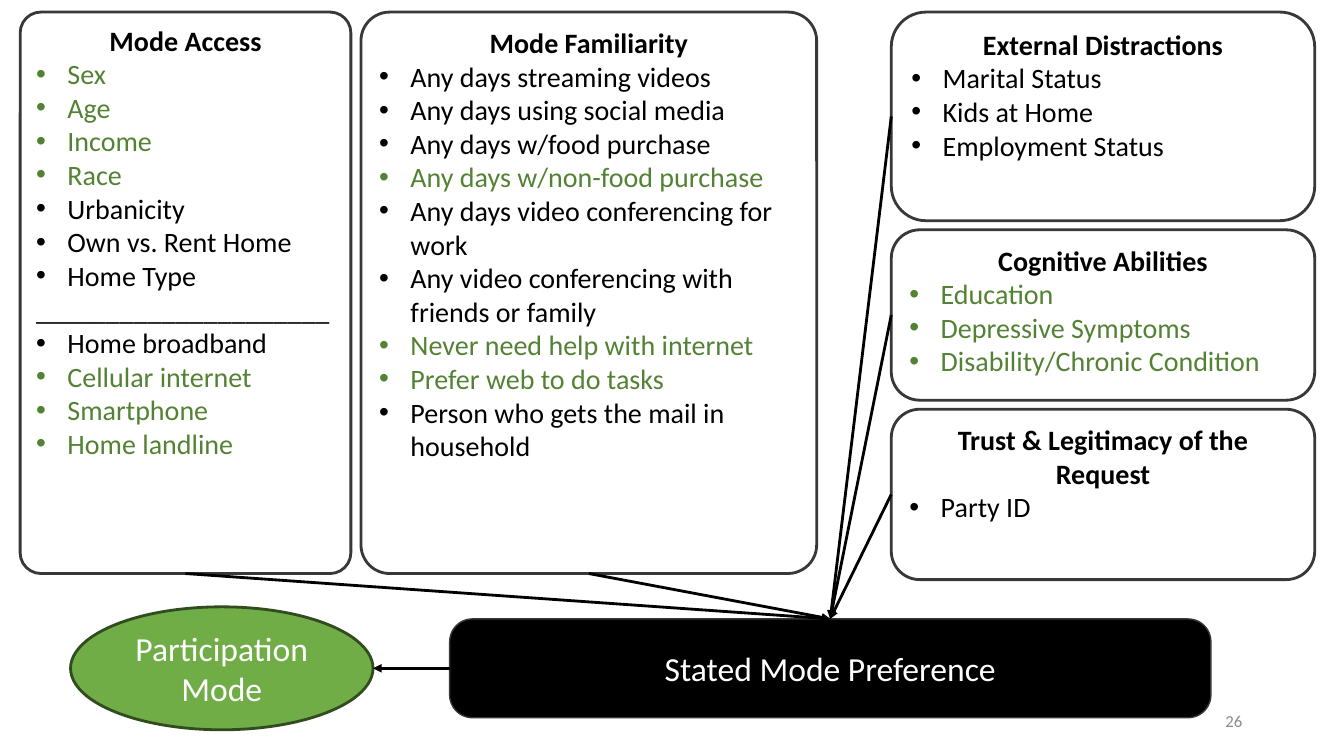
from dataclasses import dataclass

from lxml import etree
from pptx import Presentation
from pptx import util as u
from pptx.dml.color import RGBColor
from pptx.enum import shapes, text
from pptx.oxml.ns import qn

RULE = "_____________________"

# Items marked with "+" are highlighted in green.
ACCESS = ("Mode Access", [
    "+Sex", "+Age", "+Income", "+Race", "Urbanicity", "Own vs. Rent Home",
    "Home Type", RULE, "Home broadband", "+Cellular internet",
    "+Smartphone", "+Home landline"])
FAMILIARITY = ("Mode Familiarity", [
    "Any days streaming videos", "Any days using social media",
    "Any days w/food purchase", "+Any days w/non-food purchase",
    "Any days video conferencing for work",
    "Any video conferencing with friends or family",
    "+Never need help with internet", "+Prefer web to do tasks",
    "Person who gets the mail in household"])
SIDE_FACTORS = [
    (("External Distractions",
      ["Marital Status", "Kids at Home", "Employment Status"]), 2.07),
    (("Cognitive Abilities",
      ["+Education", "+Depressive Symptoms", "+Disability/Chronic Condition"]), 1.69),
    (("Trust & Legitimacy of the Request", ["Party ID"]), 1.69)]
PREFERENCE = "Stated Mode Preference"
PARTICIPATION = "Participation Mode"
PAGE_NUMBER = "26"


@dataclass(frozen=True)
class Theme:
    font: str = "Calibri"
    ink: str = "000000"
    paper: str = "FFFFFF"
    outline: str = "383838"
    highlight: str = "548235"
    oval: str = "70AD47"
    oval_edge: str = "314C1F"
    muted: str = "8C8C8C"
    body_size: int = 20
    outcome_size: int = 24
    page_size: int = 12
    line: int = 2


THEME = Theme()
TOP, GAP = 0.12, 0.09
TALL = 5.57
SIDE_LEFT, SIDE_WIDTH = 8.84, 4.2
INDENT = u.Inches(0.31)
ROUND, OVAL = shapes.MSO_SHAPE.ROUNDED_RECTANGLE, shapes.MSO_SHAPE.OVAL
TOP_SITE, LEFT_SITE, BOTTOM_SITE = 0, 1, 2

deck = Presentation()
deck.slide_width, deck.slide_height = u.Inches(13.33), u.Inches(7.5)
slide = deck.slides.add_slide(deck.slide_layouts[6])


def style(paragraph, size, color, bold=False, align=text.PP_ALIGN.LEFT):
    paragraph.alignment = align
    for run in paragraph.runs:
        run.font.name, run.font.size, run.font.bold = THEME.font, u.Pt(size), bold
        run.font.color.rgb = RGBColor.from_string(color)


def add_bullet(paragraph):
    props = paragraph._p.get_or_add_pPr()
    props.set("marL", str(INDENT))
    props.set("indent", str(-INDENT))
    etree.SubElement(props, qn("a:buFont")).set("typeface", "Arial")
    etree.SubElement(props, qn("a:buChar")).set("char", "•")


def add_block(kind, place, fill, edge, width=THEME.line, corner=None):
    block = slide.shapes.add_shape(kind, *map(u.Inches, place))
    block.shadow.inherit = False
    block.fill.solid()
    block.fill.fore_color.rgb = RGBColor.from_string(fill)
    block.line.color.rgb = RGBColor.from_string(edge)
    block.line.width = u.Pt(width)
    if corner:
        block.adjustments[0] = corner
    block.text_frame.word_wrap = True
    return block


def add_factor(factor, place, corner=None):
    """Draw a rounded box with a bold heading and its bulleted items."""
    heading, items = factor
    box = add_block(ROUND, place, THEME.paper, THEME.outline, corner=corner)
    frame = box.text_frame
    frame.vertical_anchor = text.MSO_ANCHOR.TOP
    frame.text = heading
    style(frame.paragraphs[0], THEME.body_size, THEME.ink, True, text.PP_ALIGN.CENTER)
    for item in items:
        line = frame.add_paragraph()
        line.text = item.lstrip("+")
        style(line, THEME.body_size, THEME.highlight if item[0] == "+" else THEME.ink)
        if item != RULE:
            add_bullet(line)
    return box


def add_outcome(block, label):
    block.text_frame.text = label
    block.text_frame.vertical_anchor = text.MSO_ANCHOR.MIDDLE
    style(block.text_frame.paragraphs[0], THEME.outcome_size, THEME.paper,
          align=text.PP_ALIGN.CENTER)


def add_arrow(source, site, end_x, end_y):
    arrow = slide.shapes.add_connector(
        shapes.MSO_CONNECTOR.STRAIGHT, 0, 0, end_x, end_y)
    arrow.begin_connect(source, site)
    arrow.line.color.rgb = RGBColor.from_string(THEME.ink)
    arrow.line.width = u.Pt(THEME.line)
    etree.SubElement(arrow.line._get_or_add_ln(), qn("a:tailEnd")).set("type", "triangle")
    etree.SubElement(arrow._element.spPr, qn("a:effectLst"))
    return arrow


preference = add_block(ROUND, (4.46, 6.14, 7.55, 0.98), THEME.ink, THEME.outline, 1, 0.231)
add_outcome(preference, PREFERENCE)
participation = add_block(OVAL, (0.7, 6.02, 3, 1.22), THEME.oval, THEME.oval_edge)
participation.text_frame.margin_left = participation.text_frame.margin_right = 0
add_outcome(participation, PARTICIPATION)

sources = [
    (add_factor(ACCESS, (0.2, TOP, 3.28, TALL), 0.063), BOTTOM_SITE),
    (add_factor(FAMILIARITY, (3.58, TOP, 4.52, TALL), 0.063), BOTTOM_SITE)]
top = TOP
for factor, height in SIDE_FACTORS:
    sources.append((add_factor(factor, (SIDE_LEFT, top, SIDE_WIDTH, height)), LEFT_SITE))
    top += height + GAP

for source, site in sources:
    arrow = add_arrow(source, site, preference.left + preference.width // 2, preference.top)
    arrow.end_connect(preference, TOP_SITE)
add_arrow(preference, LEFT_SITE, participation.left + participation.width,
          participation.top + participation.height // 2)

page = slide.shapes.add_textbox(*map(u.Inches, (9.42, 6.95, 3, 0.4))).text_frame
page.word_wrap = True
page.vertical_anchor = text.MSO_ANCHOR.MIDDLE
page.text = PAGE_NUMBER
style(page.paragraphs[0], THEME.page_size, THEME.muted, align=text.PP_ALIGN.RIGHT)

deck.save("out.pptx")
